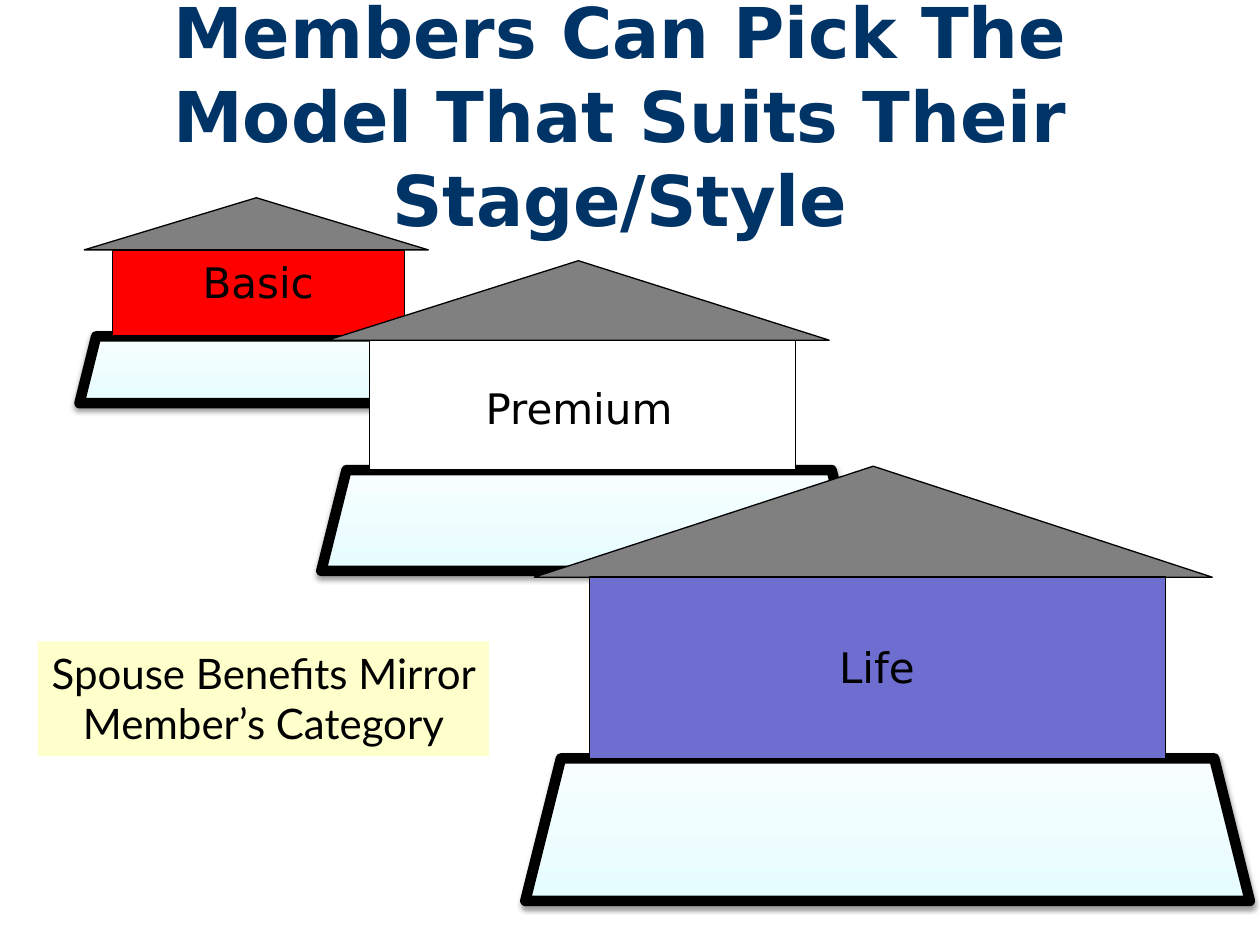
from dataclasses import dataclass
from typing import Optional

from lxml.etree import SubElement
from pptx import Presentation
from pptx.dml.color import RGBColor
from pptx.enum.shapes import MSO_SHAPE as SHAPE
from pptx.enum.text import MSO_ANCHOR as ANCHOR, PP_ALIGN as ALIGN
from pptx.oxml.ns import qn
from pptx.util import Pt

FONT = "DejaVu Sans"
COLORS = {
    "title": "003366", "text": "000000", "line": "000000", "roof": "808080",
    "basic": "FF0000", "premium": "FFFFFF", "life": "6E6ED0", "note": "FFFFCC",
    "lawn_front": "E6FDFF", "lawn_back": "F8FEFF",
}


@dataclass
class Box:
    left: float
    top: float
    width: float
    height: float

    def points(self) -> tuple:
        return tuple(Pt(v) for v in (self.left, self.top, self.width, self.height))


@dataclass
class House:
    name: str
    lawn: Box
    roof: Box
    wall: Box
    label: Optional[Box] = None


HOUSES = [
    House("Basic", Box(45.4, 192.2, 210.2, 38.2), Box(48.2, 113, 196.6, 29.8),
          Box(64.1, 143, 167, 49)),
    House("Premium", Box(183.6, 268.6, 306, 57.6), Box(187.2, 149, 286.6, 45.4),
          Box(211, 194.4, 243.4, 74.2), Box(269.3, 215.3, 123.1, 36.7)),
    House("Life", Box(300.2, 433.4, 414, 81.4), Box(305.3, 266.4, 387.4, 63.4),
          Box(337, 329.8, 329, 103.7), Box(472.3, 362.9, 57.6, 36.7)),
]


def rgb(key: str) -> RGBColor:
    return RGBColor.from_string(COLORS[key])


def add_block(shapes, kind, box: Box, fill: Optional[str], line: float):
    s = shapes.add_shape(kind, *box.points())
    s.shadow.inherit = False
    if fill:
        s.fill.solid()
        s.fill.fore_color.rgb = rgb(fill)
    if line:
        s.line.color.rgb = rgb("line")
        s.line.width = Pt(line)
    else:
        s.line.fill.background()
    return s


def add_lawn(shapes, box: Box) -> None:
    s = add_block(shapes, SHAPE.TRAPEZOID, box, None, 6)
    s.fill.gradient()
    s.fill.gradient_angle = 90
    for stop, key in zip(s.fill.gradient_stops, ("lawn_front", "lawn_back")):
        stop.color.rgb = rgb(key)
    sp_pr = s._element.spPr
    SubElement(sp_pr.find(qn("a:ln")), qn("a:round"))
    shadow = SubElement(sp_pr.find(qn("a:effectLst")), qn("a:outerShdw"),
                        blurRad=str(Pt(3.1)), dist=str(Pt(1.6)),
                        dir="5400000", rotWithShape="0")
    color = SubElement(shadow, qn("a:srgbClr"), val=COLORS["line"])
    SubElement(color, qn("a:alpha"), val="38000")


def write(s, text: str, size: float = 24, font: str = FONT, color: str = "text",
          bold: bool = False, anchor=ANCHOR.TOP, wrap: bool = True) -> None:
    tf = s.text_frame
    tf.text = text
    tf.word_wrap = wrap
    tf.vertical_anchor = anchor
    p = tf.paragraphs[0]
    p.alignment = ALIGN.CENTER
    f = p.runs[0].font
    f.name, f.size, f.bold = font, Pt(size), bold
    f.color.rgb = rgb(color)


def add_house(slide, house: House) -> None:
    shapes = slide.shapes.add_group_shape().shapes
    add_lawn(shapes, house.lawn)
    add_block(shapes, SHAPE.ISOSCELES_TRIANGLE, house.roof, "roof", 0.75)
    wall = add_block(shapes, SHAPE.RECTANGLE, house.wall, house.name.lower(), 0.75)
    if house.label is None:
        write(wall, house.name)


def main() -> None:
    """Build the slide of three membership houses."""
    prs = Presentation()
    prs.slide_width, prs.slide_height = Pt(720), Pt(540)
    slide = prs.slides.add_slide(prs.slide_layouts[5])

    title = slide.shapes.title
    title.left, title.top, title.width, title.height = Box(48.2, 17.3, 612, 95.8).points()
    write(title, "Members Can Pick The Model That Suits Their Stage/Style",
          40, color="title", bold=True, anchor=ANCHOR.MIDDLE)

    for house in HOUSES:
        add_house(slide, house)
    for house in HOUSES:
        if house.label:
            label = slide.shapes.add_textbox(*house.label.points())
            write(label, house.name, wrap=False)

    note = add_block(slide.shapes, SHAPE.RECTANGLE, Box(21.6, 366.5, 257.8, 65.5), "note", 0)
    write(note, "Spouse Benefits Mirror Member’s Category", font="Lato")

    prs.save("out.pptx")


if __name__ == "__main__":
    main()
